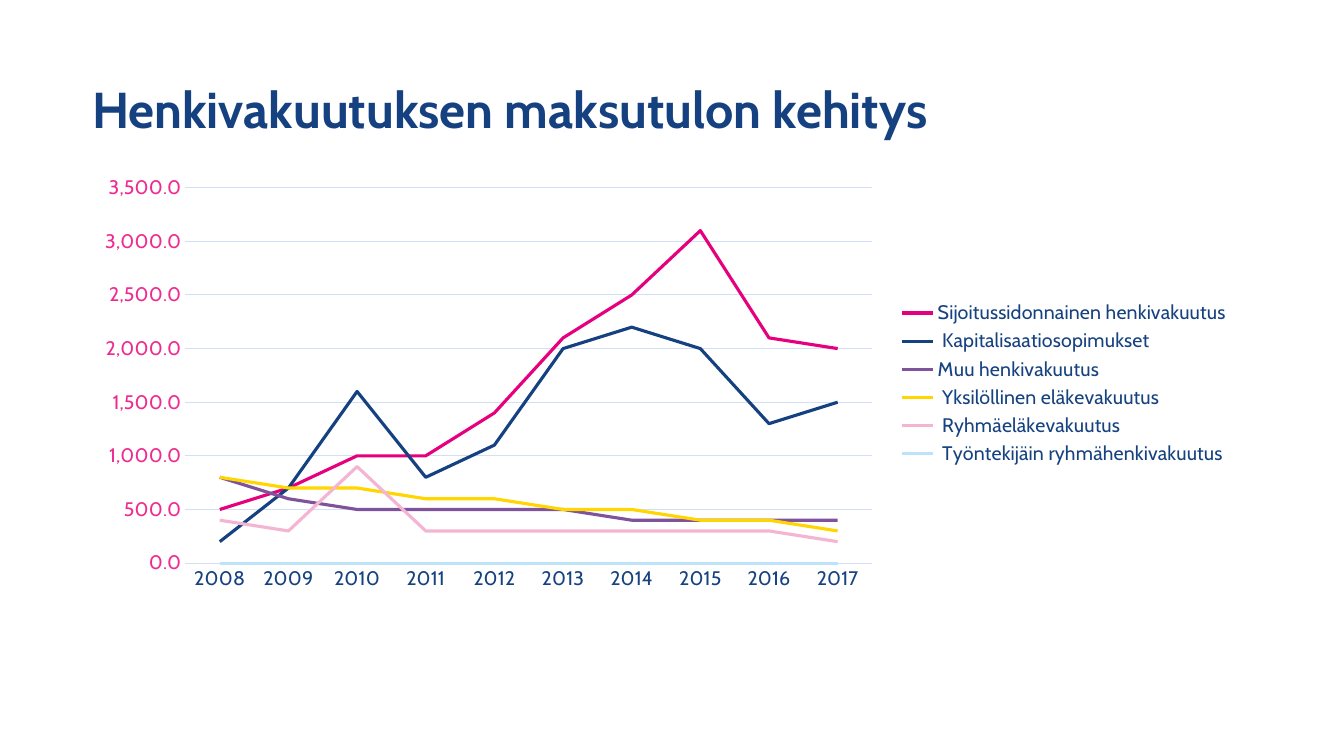
from dataclasses import dataclass

from pptx import Presentation
from pptx.chart.chart import Chart
from pptx.chart.data import CategoryChartData
from pptx.dml.color import RGBColor
from pptx.enum.chart import XL_CHART_TYPE, XL_LEGEND_POSITION, XL_MARKER_STYLE, XL_TICK_MARK
from pptx.enum.text import MSO_ANCHOR, MSO_AUTO_SIZE, PP_ALIGN
from pptx.slide import Slide
from pptx.text.text import Font
from pptx.util import Emu, Pt

EMU_PER_PX = 9071.43
FONT_NAME = "Cabin"
COLORS = {
    "title": "164180",
    "label": "164280",
    "value_label": "EE2C90",
    "grid": "D1E0F7",
    "magenta": "E6007E",
    "navy": "164180",
    "purple": "7F539C",
    "yellow": "FFD600",
    "rose": "F4B5D3",
    "sky": "BCE3FA",
}


@dataclass(frozen=True)
class PremiumSeries:
    name: str
    color: str
    values: tuple[int, ...]


YEARS = [str(year) for year in range(2008, 2018)]
PREMIUMS = [
    PremiumSeries("Sijoitussidonnainen henkivakuutus", "magenta",
                  (500, 700, 1000, 1000, 1400, 2100, 2500, 3100, 2100, 2000)),
    PremiumSeries(" Kapitalisaatiosopimukset", "navy",
                  (200, 700, 1600, 800, 1100, 2000, 2200, 2000, 1300, 1500)),
    PremiumSeries("Muu henkivakuutus", "purple",
                  (800, 600, 500, 500, 500, 500, 400, 400, 400, 400)),
    PremiumSeries(" Yksilöllinen eläkevakuutus", "yellow",
                  (800, 700, 700, 600, 600, 500, 500, 400, 400, 300)),
    PremiumSeries(" Ryhmäeläkevakuutus", "rose",
                  (400, 300, 900, 300, 300, 300, 300, 300, 300, 200)),
    PremiumSeries(" Työntekijäin ryhmähenkivakuutus", "sky", (0,) * len(YEARS)),
]


def px(length: int) -> Emu:
    return Emu(round(length * EMU_PER_PX))


def rgb(color: str) -> RGBColor:
    return RGBColor.from_string(COLORS[color])


def format_font(font: Font, size: int, color: str, bold: bool = False) -> None:
    font.name = FONT_NAME
    font.size = Pt(size)
    font.bold = bold
    font.color.rgb = rgb(color)


def add_title(slide: Slide, text: str) -> None:
    title = slide.shapes.title
    title.left, title.top, title.width, title.height = px(82), px(39), px(1159), px(146)
    frame = title.text_frame
    frame.text = text
    frame.word_wrap = True
    frame.auto_size = MSO_AUTO_SIZE.NONE
    frame.vertical_anchor = MSO_ANCHOR.MIDDLE
    paragraph = frame.paragraphs[0]
    paragraph.alignment = PP_ALIGN.LEFT
    paragraph.line_spacing = 0.9
    format_font(paragraph.runs[0].font, 36, "title", bold=True)


def format_axes(chart: Chart) -> None:
    for axis, color in ((chart.category_axis, "label"), (chart.value_axis, "value_label")):
        axis.major_tick_mark = XL_TICK_MARK.NONE
        axis.minor_tick_mark = XL_TICK_MARK.NONE
        format_font(axis.tick_labels.font, 14, color)
    category_line = chart.category_axis.format.line
    value_axis = chart.value_axis
    value_axis.minimum_scale, value_axis.maximum_scale, value_axis.major_unit = 0, 3500, 500
    value_axis.tick_labels.number_format = "#,##0.0"
    value_axis.tick_labels.number_format_is_linked = False
    value_axis.format.line.fill.background()
    for line in (category_line, value_axis.major_gridlines.format.line):
        line.color.rgb = rgb("grid")
        line.width = Pt(0.75)


def add_premium_chart(slide: Slide) -> None:
    data = CategoryChartData(number_format="#,##0.0")
    data.categories = YEARS
    for premium in PREMIUMS:
        data.add_series(premium.name, premium.values)
    chart = slide.shapes.add_chart(
        XL_CHART_TYPE.LINE, px(82), px(167), px(1159), px(433), data).chart
    chart.has_title = False
    format_font(chart.font, 14, "label")
    chart.has_legend = True
    chart.legend.position = XL_LEGEND_POSITION.RIGHT
    chart.legend.include_in_layout = False
    format_font(chart.legend.font, 14, "label")
    format_axes(chart)
    plot = chart.plots[0]
    plot.vary_by_categories = False
    for series, premium in zip(plot.series, PREMIUMS):
        series.smooth = False
        series.marker.style = XL_MARKER_STYLE.NONE
        series.format.line.color.rgb = rgb(premium.color)
        series.format.line.width = Pt(2.25)


def main() -> None:
    presentation = Presentation()
    presentation.slide_width, presentation.slide_height = px(1344), px(756)
    title_only = presentation.slide_layouts.get_by_name("Title Only")
    slide = presentation.slides.add_slide(title_only)
    add_title(slide, "Henkivakuutuksen maksutulon kehitys")
    add_premium_chart(slide)
    presentation.save("out.pptx")


if __name__ == "__main__":
    main()
